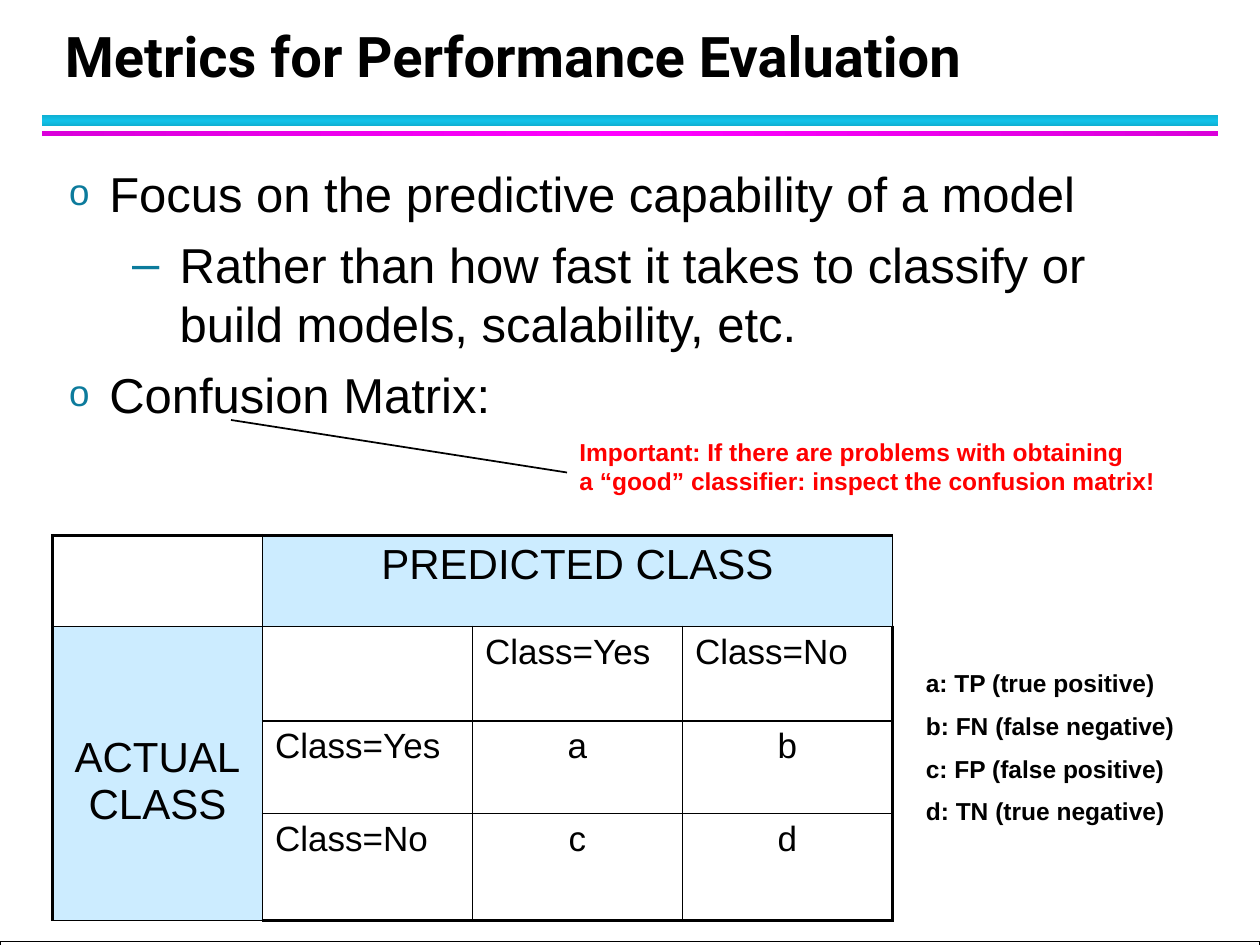
from dataclasses import dataclass

from lxml.etree import SubElement
from pptx import Presentation
from pptx.dml.color import RGBColor
from pptx.enum.shapes import MSO_CONNECTOR, MSO_SHAPE
from pptx.enum.text import MSO_ANCHOR, PP_ALIGN
from pptx.oxml.ns import qn
from pptx.util import Pt


@dataclass(frozen=True)
class Theme:
    black: str = "000000"
    white: str = "FFFFFF"
    red: str = "FF0000"
    bullet: str = "0C7B9C"
    header: str = "CCECFF"
    cyan_band: tuple = ("10B0D3", "12C2E9", "10B0D3")
    magenta_band: tuple = ("DA00DA", "FF00FF", "DA00DA")
    title_font: str = "Roboto"
    body_font: str = "Arial"
    title_size: int = 32
    body_size: int = 28
    heading_size: int = 24
    cell_size: int = 20
    note_size: int = 14
    thin: float = 1
    thick: float = 2.25


THEME = Theme()


def style(paragraph, size, color=THEME.black, bold=False, font=THEME.body_font):
    paragraph.font.name = font
    paragraph.font.size = Pt(size)
    paragraph.font.bold = bold
    paragraph.font.color.rgb = RGBColor.from_string(color)


def add_lines(slide, box, lines, wrap=True):
    """Add a text box and return its frame with one paragraph per line."""
    frame = slide.shapes.add_textbox(*map(Pt, box)).text_frame
    frame.word_wrap = wrap
    frame.text = "\n".join(lines)
    return frame


def add_bar(slide, box):
    bar = slide.shapes.add_shape(MSO_SHAPE.RECTANGLE, *map(Pt, box))
    bar.shadow.inherit = False
    return bar


def add_gradient_band(slide, box, colors, angle):
    band = add_bar(slide, box)
    band.line.fill.background()
    band.fill.gradient()
    band.fill.gradient_angle = angle
    stops = band._element.spPr.find(".//" + qn("a:gsLst"))
    for stop in list(stops):
        stops.remove(stop)
    for index, color in enumerate(colors):
        stop = SubElement(stops, qn("a:gs"), pos=str(index * 50000))
        SubElement(stop, qn("a:srgbClr"), val=color)


def set_bullet(paragraph, char, left, hanging, percent):
    props = paragraph._p.get_or_add_pPr()
    props.set("marL", str(Pt(left)))
    props.set("indent", str(-Pt(hanging)))
    color = SubElement(props, qn("a:buClr"))
    SubElement(color, qn("a:srgbClr"), val=THEME.bullet)
    SubElement(props, qn("a:buSzPct"), val=str(percent * 1000))
    SubElement(props, qn("a:buFont"), typeface=THEME.body_font)
    SubElement(props, qn("a:buChar"), char=char)


def add_bullets(slide, box, items):
    frame = add_lines(slide, box, [text for _, text in items])
    bullets = [("o", 23, 23, 75), ("–", 63.2, 27.2, 100)]
    for paragraph, (level, _) in zip(frame.paragraphs, items):
        paragraph.level = level
        paragraph.space_before = Pt(2.8)
        paragraph.space_after = Pt(4)
        set_bullet(paragraph, *bullets[level])
        style(paragraph, THEME.body_size)


def set_border(cell, side, width):
    line = SubElement(cell._tc.get_or_add_tcPr(), qn("a:ln" + side), w=str(Pt(width)))
    fill = SubElement(line, qn("a:solidFill"))
    SubElement(fill, qn("a:srgbClr"), val=THEME.black)


def write_cell(cell, text, size, centered):
    cell.text = text
    for paragraph in cell.text_frame.paragraphs:
        style(paragraph, size)
        paragraph.space_before = Pt(size / 10)
        paragraph.space_after = Pt(4)
        paragraph.alignment = PP_ALIGN.CENTER if centered else PP_ALIGN.LEFT


def add_confusion_matrix(slide, left, top, column_width, row_heights):
    entries = [
        ["", "PREDICTED CLASS", "", ""],
        ["ACTUAL\vCLASS", "", "Class=Yes", "Class=No"],
        ["", "Class=Yes", "a", "b"],
        ["", "Class=No", "c", "d"],
    ]
    size = len(entries)
    last = size - 1
    matrix = slide.shapes.add_table(
        size, size, Pt(left), Pt(top), Pt(column_width * size), Pt(sum(row_heights))
    ).table
    matrix.first_row = matrix.horz_banding = False
    for column in matrix.columns:
        column.width = Pt(column_width)
    for row, height in zip(matrix.rows, row_heights):
        row.height = Pt(height)

    for r, row in enumerate(entries):
        for c, text in enumerate(row):
            cell = matrix.cell(r, c)
            outer_edges = {"L": c == 0, "R": c == last, "T": r == 0, "B": r == last}
            for side, outer in outer_edges.items():
                set_border(cell, side, THEME.thick if outer else THEME.thin)
            heading = (r == 0) != (c == 0)
            if heading:
                cell.fill.solid()
                cell.fill.fore_color.rgb = RGBColor.from_string(THEME.header)
            else:
                cell.fill.background()
            if text:
                font_size = THEME.heading_size if heading else THEME.cell_size
                write_cell(cell, text, font_size, heading or len(text) == 1)

    matrix.cell(0, 1).merge(matrix.cell(0, last))
    actual_class = matrix.cell(1, 0)
    actual_class.merge(matrix.cell(last, 0))
    actual_class.margin_top = Pt(62)


def add_pointer(slide, start, end):
    pointer = slide.shapes.add_connector(MSO_CONNECTOR.STRAIGHT, *map(Pt, start + end))
    pointer.line.color.rgb = RGBColor.from_string(THEME.black)
    pointer.line.width = Pt(THEME.thin)
    SubElement(pointer._element.spPr, qn("a:effectLst"))


def main():
    presentation = Presentation()
    presentation.slide_width, presentation.slide_height = Pt(720), Pt(540)
    slide = presentation.slides.add_slide(presentation.slide_layouts[6])

    # Header bands and footer strip
    add_gradient_band(slide, (24, 66, 672, 6), THEME.cyan_band, 90)
    add_gradient_band(slide, (24, 75, 672, 3), THEME.magenta_band, 0)
    footer = add_bar(slide, (0, 538, 720, 24))
    footer.fill.solid()
    footer.fill.fore_color.rgb = RGBColor.from_string(THEME.white)
    footer.line.color.rgb = RGBColor.from_string(THEME.black)
    footer.line.width = Pt(THEME.thin)

    # Title
    title = add_lines(slide, (30, 12, 652, 42), ["Metrics for Performance Evaluation"])
    title.vertical_anchor = MSO_ANCHOR.BOTTOM
    title.paragraphs[0].line_spacing = Pt(36)
    style(title.paragraphs[0], THEME.title_size, bold=True, font=THEME.title_font)

    # Main points
    add_bullets(slide, (32.4, 90, 655, 408), [
        (0, "Focus on the predictive capability of a model"),
        (1, "Rather than how fast it takes to classify or build models, scalability, etc."),
        (0, "Confusion Matrix:"),
    ])

    # Confusion matrix and its legend
    add_confusion_matrix(slide, 30, 306, 120, (52, 54, 53, 61))
    legend = add_lines(slide, (522, 378, 174, 99), [
        "a: TP (true positive)",
        "b: FN (false negative)",
        "c: FP (false positive)",
        "d: TN (true negative)",
    ])
    for paragraph in legend.paragraphs:
        paragraph.space_before = Pt(7.7)
        style(paragraph, THEME.note_size, bold=True)

    # Advice with its pointer
    advice = add_lines(slide, (324, 246, 348.5, 41), [
        "Important: If there are problems with obtaining",
        "a “good” classifier: inspect the confusion matrix!",
    ], wrap=False)
    for paragraph in advice.paragraphs:
        style(paragraph, THEME.note_size, THEME.red, bold=True)
    add_pointer(slide, (132, 240), (324, 270))

    presentation.save("out.pptx")


if __name__ == "__main__":
    main()
